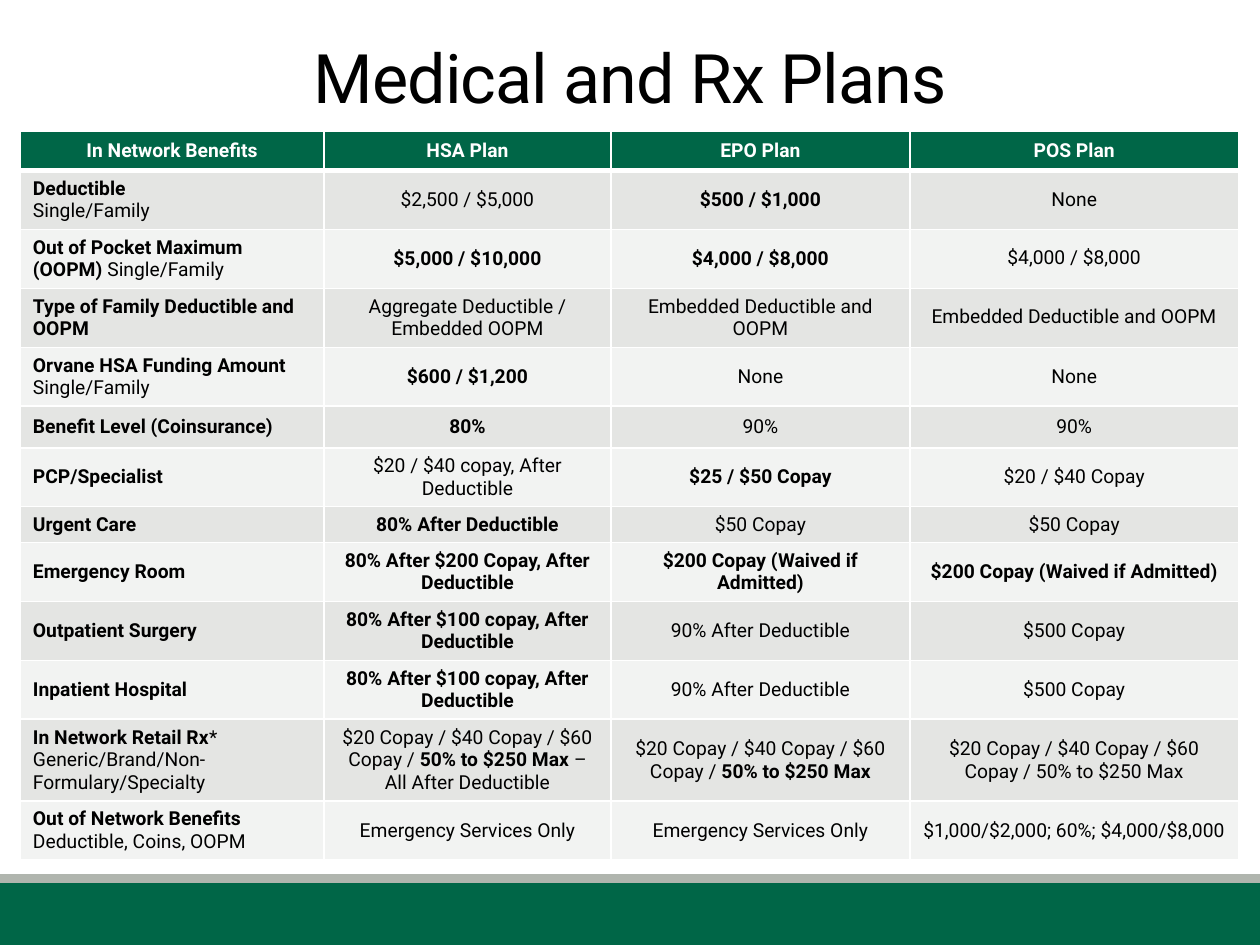
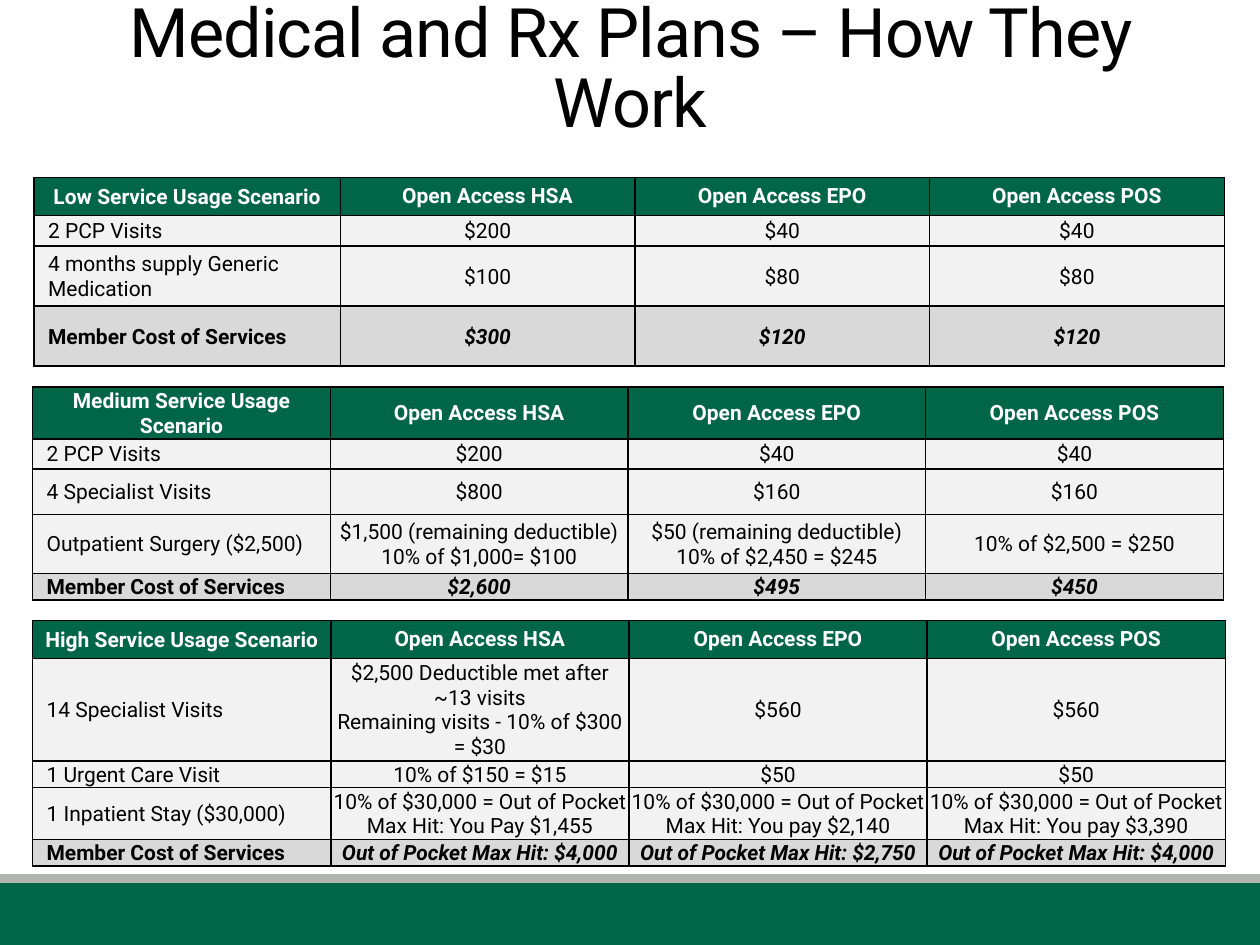
"""Build two slides that compare medical and Rx plans."""
import pptx
import pptx.dml.color
import pptx.enum.shapes
import pptx.enum.text
import pptx.oxml
import pptx.oxml.ns
import pptx.util

Cm = pptx.util.Cm
Pt = pptx.util.Pt
ALIGN = pptx.enum.text.PP_ALIGN
ANCHOR = pptx.enum.text.MSO_ANCHOR

FONT = "Roboto"
COLORS = {
    "green": "006647", "gray": "B0B5AE", "white": "FFFFFF", "black": "000000",
    "band_dark": "E4E5E3", "band_light": "F2F3F2", "body": "F2F2F2", "total": "D9D9D9",
}
SLIDE_WIDTH, SLIDE_HEIGHT = 25.4, 19.05
TITLE_HEIGHT = 2.31

PLAN_TITLE = {"text": "Medical and Rx Plans", "left": 2.22, "top": 0.18, "width": 20.96}
PLAN_ROWS = [
    ("In Network Benefits", "HSA Plan", "EPO Plan", "POS Plan"),
    ("**Deductible**\nSingle/Family", "$2,500 / $5,000", "**$500 / $1,000**", "None"),
    ("**Out of Pocket Maximum (OOPM)** Single/Family", "**$5,000 / $10,000**",
     "**$4,000 / $8,000**", "$4,000 / $8,000"),
    ("**Type of Family Deductible and OOPM**", "Aggregate Deductible / Embedded OOPM",
     "Embedded Deductible and OOPM", "Embedded Deductible and OOPM"),
    ("**Orvane HSA Funding Amount**\nSingle/Family", "**$600 / $1,200**", "None", "None"),
    ("**Benefit Level (Coinsurance)**", "**80%**", "90%", "90%"),
    ("**PCP/Specialist**", "$20 / $40 copay, After Deductible", "**$25 / $50 Copay**",
     "$20 / $40 Copay"),
    ("**Urgent Care**", "**80% After Deductible**", "$50 Copay", "$50 Copay"),
    ("**Emergency Room**", "**80% After $200 Copay, After Deductible**",
     "**$200 Copay (Waived if Admitted)**", "**$200 Copay (Waived if Admitted)**"),
    ("**Outpatient Surgery**", "**80% After $100 copay, After Deductible**",
     "90% After Deductible", "$500 Copay"),
    ("**Inpatient Hospital**", "**80% After $100 copay, After Deductible**",
     "90% After Deductible", "$500 Copay"),
    ("**In Network Retail Rx***\nGeneric/Brand/Non-Formulary/Specialty",
     "$20 Copay / $40 Copay / $60 Copay / **50% to $250 Max** –\nAll After Deductible",
     "$20 Copay / $40 Copay / $60 Copay / **50% to $250 Max**",
     "$20 Copay / $40 Copay / $60 Copay / 50% to $250 Max"),
    ("**Out of Network Benefits**\nDeductible, Coins, OOPM", "Emergency Services Only",
     "Emergency Services Only", "$1,000/$2,000; 60%; $4,000/$8,000"),
]
PLAN_WIDTHS = [6.12, 5.79, 6.02, 6.63]
TWO_LINES = 1.16
PLAN_HEIGHTS = [0.8] + [TWO_LINES] * 4 + [0.84, TWO_LINES, 0.7] + [TWO_LINES] * 3 + [1.61, TWO_LINES]
PLAN_TIGHT_CELLS = {(2, 3), (3, 3)}

SCENARIO_TITLE = {"text": "Medical and Rx Plans – How They Work",
                  "left": 1.09, "top": 0.66, "width": 23.24}
ACCESS_PLANS = ("Open Access HSA", "Open Access EPO", "Open Access POS")
TOTAL_LABEL = "Member Cost of Services"
SCENARIOS = [
    {"name": "Low Service Usage Scenario", "left": 0.69, "top": 3.58,
     "widths": [6.17] + [5.94] * 3, "heights": [0.74, 0.62, 1.21, 1.21],
     "services": [
         ("2 PCP Visits", "$200", "$40", "$40"),
         ("4 months supply Generic Medication", "$100", "$80", "$80")],
     "totals": ("$300", "$120", "$120")},
    {"name": "Medium Service Usage Scenario", "left": 0.66, "top": 7.8,
     "widths": [6.0] * 4, "heights": [1.0, 0.61, 0.91, 1.19, 0.52],
     "services": [
         ("2 PCP Visits", "$200", "$40", "$40"),
         ("4 Specialist Visits", "$800", "$160", "$160"),
         ("Outpatient Surgery ($2,500)", "$1,500 (remaining deductible)\n10% of $1,000= $100",
          "$50 (remaining deductible)\n10% of $2,450 = $245", "10% of $2,500 = $250")],
     "totals": ("$2,600", "$495", "$450")},
    {"name": "High Service Usage Scenario", "left": 0.66, "top": 12.51,
     "widths": [6.01] * 4, "heights": [0.76, 2.0, 0.52, 1.0, 0.51],
     "services": [
         ("14 Specialist Visits",
          "$2,500 Deductible met after ~13 visits\nRemaining visits - 10% of $300 = $30",
          "$560", "$560"),
         ("1 Urgent Care Visit", "10% of $150 = $15", "$50", "$50"),
         ("1 Inpatient Stay ($30,000)",
          "10% of $30,000 = Out of Pocket Max Hit: You Pay $1,455",
          "10% of $30,000 = Out of Pocket Max Hit: You pay $2,140",
          "10% of $30,000 = Out of Pocket Max Hit: You pay $3,390")],
     "totals": tuple(f"Out of Pocket Max Hit: {cost}" for cost in ("$4,000", "$2,750", "$4,000"))},
]


def rgb(name):
    return pptx.dml.color.RGBColor.from_string(COLORS[name])


def write_text(frame, text, size=12, color="black", bold=False, italic=False,
               align=ALIGN.CENTER, line_spacing=None, tracking=None):
    frame.word_wrap = True
    for index, line in enumerate(text.split("\n")):
        paragraph = frame.add_paragraph() if index else frame.paragraphs[0]
        paragraph.alignment = align
        paragraph.line_spacing = line_spacing
        for part_index, part in enumerate(line.split("**")):
            if not part:
                continue
            run = paragraph.add_run()
            run.text = part
            run.font.name = FONT
            run.font.size = Pt(size)
            run.font.bold = bold or part_index % 2 == 1
            run.font.italic = italic
            run.font.color.rgb = rgb(color)
            if tracking is not None:
                run._r.get_or_add_rPr().set("spc", str(int(tracking * 100)))


def add_band(slide, top, height, color):
    shape = slide.shapes.add_shape(pptx.enum.shapes.MSO_SHAPE.RECTANGLE,
                                   Cm(0), Cm(top), Cm(SLIDE_WIDTH), Cm(height))
    shape.shadow.inherit = False
    shape.fill.solid()
    shape.fill.fore_color.rgb = rgb(color)
    shape.line.fill.background()


def add_titled_slide(presentation, title):
    slide = presentation.slides.add_slide(presentation.slide_layouts[6])
    add_band(slide, 17.78, 1.27, "green")
    add_band(slide, 17.62, 0.18, "gray")
    box = slide.shapes.add_textbox(Cm(title["left"]), Cm(title["top"]),
                                   Cm(title["width"]), Cm(TITLE_HEIGHT))
    box.text_frame.vertical_anchor = ANCHOR.BOTTOM
    write_text(box.text_frame, title["text"], size=39, line_spacing=0.85, tracking=-0.5)
    return slide


def add_grid(slide, left, top, widths, heights):
    frame = slide.shapes.add_table(len(heights), len(widths), Cm(left), Cm(top),
                                   Cm(sum(widths)), Cm(sum(heights)))
    table = frame.table
    table.horz_banding = False
    for column, width in zip(table.columns, widths):
        column.width = Cm(width)
    for row, height in zip(table.rows, heights):
        row.height = Cm(height)
    return table


def style_cell(cell, fill, border, top=1, bottom=1):
    cell.vertical_anchor = ANCHOR.MIDDLE
    properties = cell._tc.get_or_add_tcPr()
    for side, width in (("L", 1), ("R", 1), ("T", top), ("B", bottom)):
        properties.append(pptx.oxml.parse_xml(
            f'<a:ln{side} {pptx.oxml.ns.nsdecls("a")} w="{Pt(width)}"><a:solidFill>'
            f'<a:srgbClr val="{COLORS[border]}"/></a:solidFill></a:ln{side}>'))
    cell.fill.solid()
    cell.fill.fore_color.rgb = rgb(fill)


def add_plan_table(slide):
    table = add_grid(slide, 0.41, 2.64, PLAN_WIDTHS, PLAN_HEIGHTS)
    for row, texts in enumerate(PLAN_ROWS):
        header = row == 0
        fill = "green" if header else ("band_light", "band_dark")[row % 2]
        for column, text in enumerate(texts):
            cell = table.cell(row, column)
            style_cell(cell, fill, "white", top=3 if row == 1 else 1, bottom=3 if header else 1)
            write_text(cell.text_frame, text, size=11, bold=header,
                       color="white" if header else "black",
                       align=ALIGN.CENTER if header or column else ALIGN.LEFT,
                       line_spacing=0.8 if (row, column) in PLAN_TIGHT_CELLS else None)


def add_scenario_table(slide, scenario):
    rows = [(scenario["name"], *ACCESS_PLANS), *scenario["services"],
            (TOTAL_LABEL, *scenario["totals"])]
    table = add_grid(slide, scenario["left"], scenario["top"],
                     scenario["widths"], scenario["heights"])
    for row, texts in enumerate(rows):
        header, total = row == 0, row == len(rows) - 1
        fill = "green" if header else "total" if total else "body"
        for column, text in enumerate(texts):
            cell = table.cell(row, column)
            label = column == 0 and not header
            style_cell(cell, fill, "black")
            if column == 0 or not header:
                cell.margin_left = Cm(0.28 if label else 0.03)
                cell.margin_right = cell.margin_top = Cm(0.03)
                cell.margin_bottom = Cm(0)
            write_text(cell.text_frame, text, color="white" if header else "black",
                       bold=header or total, italic=total and not label,
                       align=ALIGN.LEFT if label else ALIGN.CENTER)


def main():
    presentation = pptx.Presentation()
    presentation.slide_width = Cm(SLIDE_WIDTH)
    presentation.slide_height = Cm(SLIDE_HEIGHT)
    add_plan_table(add_titled_slide(presentation, PLAN_TITLE))
    scenario_slide = add_titled_slide(presentation, SCENARIO_TITLE)
    for scenario in SCENARIOS:
        add_scenario_table(scenario_slide, scenario)
    presentation.save("out.pptx")


if __name__ == "__main__":
    main()
